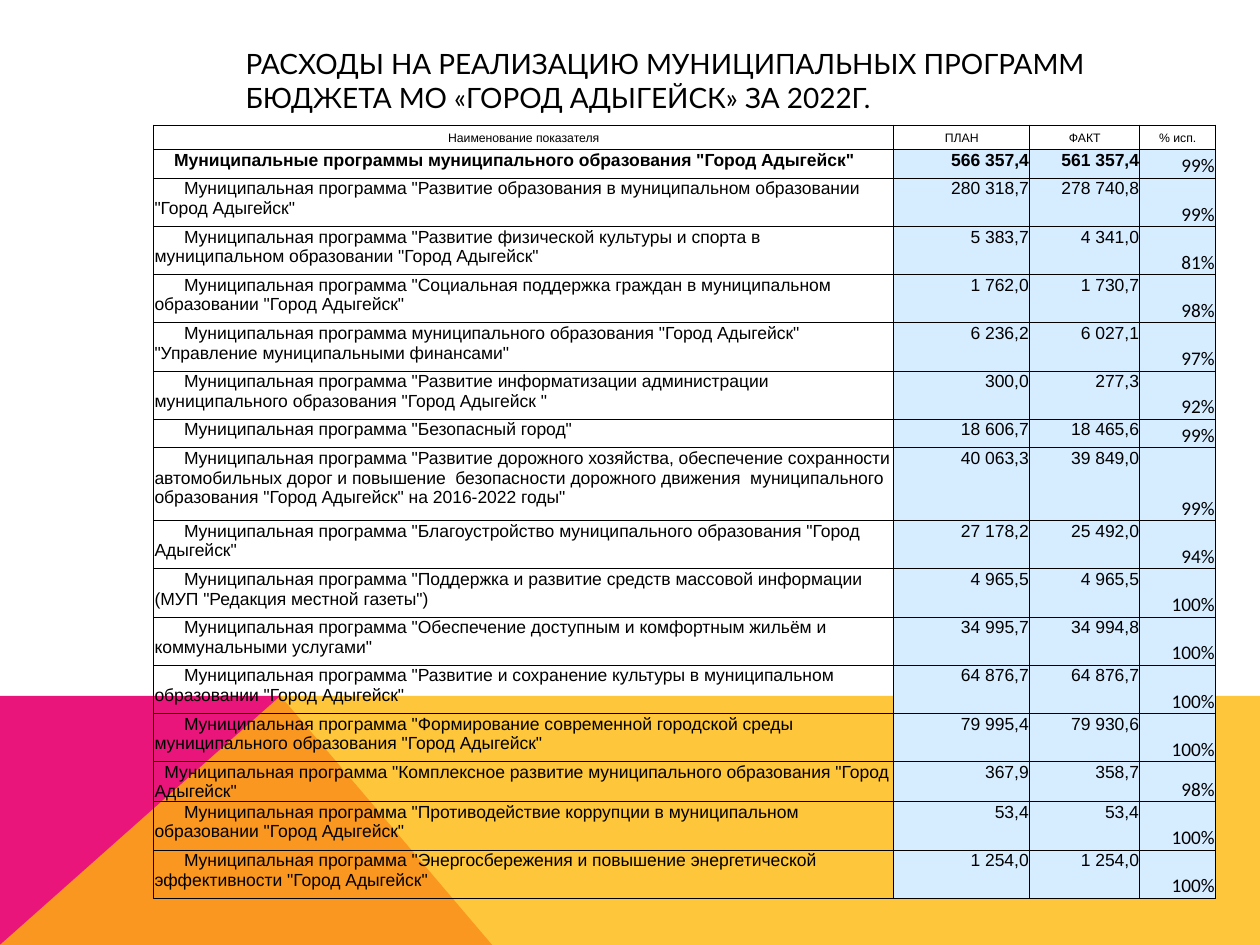
from dataclasses import dataclass

from lxml import etree
from pptx import Presentation
from pptx import util as u
from pptx.dml.color import RGBColor
from pptx.enum import text
from pptx.oxml import ns

PX = 914400 / 128  # EMU in one px; the slide is 1280 x 960 px


@dataclass(frozen=True)
class Theme:
    ink: str = "000000"
    pink: str = "EA157A"
    amber: str = "FEB80A"
    figures: str = "D6ECFF"
    title_font: str = "Lato"
    body_font: str = "Arial"
    percent_font: str = "Calibri"
    title_size: int = 16
    head_size: int = 7
    body_size: int = 10
    percent_size: int = 11
    border: float = 0.5


@dataclass(frozen=True)
class Programme:
    name: str
    plan: str
    fact: str
    percent: str
    height: int = 49
    indent: int = 30
    bold: bool = False


@dataclass(frozen=True)
class Band:
    points: tuple[tuple[int, int], ...]
    color: str
    opacity: int = 100


T = Theme()
ALIGN, ANCHOR = text.PP_ALIGN, text.MSO_ANCHOR
TITLE = "РАСХОДЫ НА РЕАЛИЗАЦИЮ МУНИЦИПАЛЬНЫХ ПРОГРАММ БЮДЖЕТА МО «ГОРОД АДЫГЕЙСК» ЗА 2022Г."
HEADINGS = ("Наименование показателя", "ПЛАН", "ФАКТ", "% исп.")
COL_WIDTHS = (752, 138, 112, 77)
HEAD_HEIGHT = 25
BANDS = (
    Band(((0, 960), (0, 707), (285, 707), (500, 960)), T.pink),
    Band(((0, 960), (285, 707), (1280, 707), (1280, 960)), T.amber, 80),
)
PROGRAMMES = (
    Programme('Муниципальные программы муниципального образования "Город Адыгейск"',
              "566 357,4", "561 357,4", "99%", height=29, indent=20, bold=True),
    Programme('Муниципальная программа "Развитие образования в муниципальном образовании '
              '"Город Адыгейск"', "280 318,7", "278 740,8", "99%"),
    Programme('Муниципальная программа "Развитие физической культуры и спорта в '
              'муниципальном образовании "Город Адыгейск"', "5 383,7", "4 341,0", "81%"),
    Programme('Муниципальная программа "Социальная поддержка граждан в муниципальном '
              'образовании "Город Адыгейск"', "1 762,0", "1 730,7", "98%"),
    Programme('Муниципальная программа муниципального образования "Город Адыгейск" '
              '"Управление муниципальными финансами"', "6 236,2", "6 027,1", "97%"),
    Programme('Муниципальная программа "Развитие информатизации администрации '
              'муниципального образования "Город Адыгейск "', "300,0", "277,3", "92%"),
    Programme('Муниципальная программа "Безопасный город"',
              "18 606,7", "18 465,6", "99%", height=29),
    Programme('Муниципальная программа "Развитие дорожного хозяйства, обеспечение сохранности '
              'автомобильных дорог и повышение  безопасности дорожного движения  '
              'муниципального образования "Город Адыгейск" на 2016-2022 годы"',
              "40 063,3", "39 849,0", "99%", height=74),
    Programme('Муниципальная программа "Благоустройство муниципального образования "Город '
              'Адыгейск"', "27 178,2", "25 492,0", "94%"),
    Programme('Муниципальная программа "Поддержка и развитие средств массовой информации '
              '(МУП "Редакция местной газеты")', "4 965,5", "4 965,5", "100%"),
    Programme('Муниципальная программа "Обеспечение доступным и комфортным жильём и '
              'коммунальными услугами"', "34 995,7", "34 994,8", "100%"),
    Programme('Муниципальная программа "Развитие и сохранение культуры в муниципальном '
              'образовании "Город Адыгейск"', "64 876,7", "64 876,7", "100%"),
    Programme('Муниципальная программа "Формирование современной городской среды '
              'муниципального образования "Город Адыгейск"', "79 995,4", "79 930,6", "100%"),
    Programme('Муниципальная программа "Комплексное развитие муниципального образования "Город '
              'Адыгейск"', "367,9", "358,7", "98%", height=40, indent=10),
    Programme('Муниципальная программа "Противодействие коррупции в муниципальном '
              'образовании "Город Адыгейск"', "53,4", "53,4", "100%"),
    Programme('Муниципальная программа "Энергосбережения и повышение энергетической '
              'эффективности "Город Адыгейск"', "1 254,0", "1 254,0", "100%"),
)


def px(n: int) -> u.Emu:
    return u.Emu(round(n * PX))


def apply(target, values: dict) -> None:
    for key, value in values.items():
        setattr(target, key, value)


def write(p, words: str, font: str, size: int, bold: bool = False) -> None:
    r = p.add_run()
    r.text = words
    apply(r.font, {"name": font, "size": u.Pt(size), "bold": bold})
    r.font.color.rgb = RGBColor.from_string(T.ink)


def add_band(s, band: Band) -> None:
    (x, y), *rest = band.points
    builder = s.shapes.build_freeform(x, y, scale=PX)
    builder.add_line_segments(rest, close=True)
    sp = builder.convert_to_shape()
    sp.shadow.inherit = False
    sp.fill.solid()
    sp.fill.fore_color.rgb = RGBColor.from_string(band.color)
    sp.line.fill.background()
    if band.opacity < 100:
        color = sp.fill._xPr.find(".//" + ns.qn("a:srgbClr"))
        etree.SubElement(color, ns.qn("a:alpha"), val=str(band.opacity * 1000))


def add_borders(cell) -> None:
    tc_pr = cell._tc.get_or_add_tcPr()
    for i, side in enumerate(("lnL", "lnR", "lnT", "lnB")):
        ln = etree.Element(ns.qn(f"a:{side}"), w=str(u.Pt(T.border)))
        fill = etree.SubElement(ln, ns.qn("a:solidFill"))
        etree.SubElement(fill, ns.qn("a:srgbClr"), val=T.ink)
        tc_pr.insert(i, ln)


def fill_cell(cell, words: str, font: str, size: int, align, anchor=ANCHOR.TOP,
              bold: bool = False, indent: int = 0, fill: str = "") -> None:
    apply(cell, {"margin_left": px(1), "margin_right": px(1), "margin_top": px(1),
                 "margin_bottom": 0, "vertical_anchor": anchor})
    if fill:
        cell.fill.solid()
        cell.fill.fore_color.rgb = RGBColor.from_string(fill)
    else:
        cell.fill.background()
    add_borders(cell)
    p = cell.text_frame.paragraphs[0]
    p.alignment = align
    if indent:
        p_pr = p._p.get_or_add_pPr()
        p_pr.set("marL", "0")
        p_pr.set("indent", str(px(indent)))
    write(p, words, font, size, bold)


def add_programme_table(s) -> None:
    heights = [HEAD_HEIGHT] + [row.height for row in PROGRAMMES]
    frame = s.shapes.add_table(len(heights), len(COL_WIDTHS), px(156), px(127),
                               px(sum(COL_WIDTHS)), px(sum(heights)))
    table = frame.table
    apply(table, {"first_row": False, "horz_banding": False})
    for col, width in zip(table.columns, COL_WIDTHS):
        col.width = px(width)
    for row, height in zip(table.rows, heights):
        row.height = px(height)
    for c, heading in enumerate(HEADINGS):
        fill_cell(table.cell(0, c), heading, T.body_font, T.head_size,
                  ALIGN.CENTER, ANCHOR.MIDDLE)
    for i, item in enumerate(PROGRAMMES, start=1):
        fill_cell(table.cell(i, 0), item.name, T.body_font, T.body_size, ALIGN.LEFT,
                  bold=item.bold, indent=item.indent)
        for c, amount in enumerate((item.plan, item.fact), start=1):
            fill_cell(table.cell(i, c), amount, T.body_font, T.body_size, ALIGN.RIGHT,
                      bold=item.bold, fill=T.figures)
        fill_cell(table.cell(i, 3), item.percent, T.percent_font, T.percent_size,
                  ALIGN.RIGHT, ANCHOR.BOTTOM, fill=T.figures)


def add_title(s) -> None:
    tf = s.shapes.add_textbox(px(237), px(16), px(887), px(131)).text_frame
    apply(tf, {"word_wrap": True, "vertical_anchor": ANCHOR.MIDDLE})
    write(tf.paragraphs[0], TITLE, T.title_font, T.title_size)


def main() -> None:
    prs = Presentation()
    apply(prs, {"slide_width": px(1280), "slide_height": px(960)})
    s = prs.slides.add_slide(prs.slide_layouts[6])
    for band in BANDS:
        add_band(s, band)
    add_programme_table(s)
    add_title(s)
    prs.save("out.pptx")


if __name__ == "__main__":
    main()
